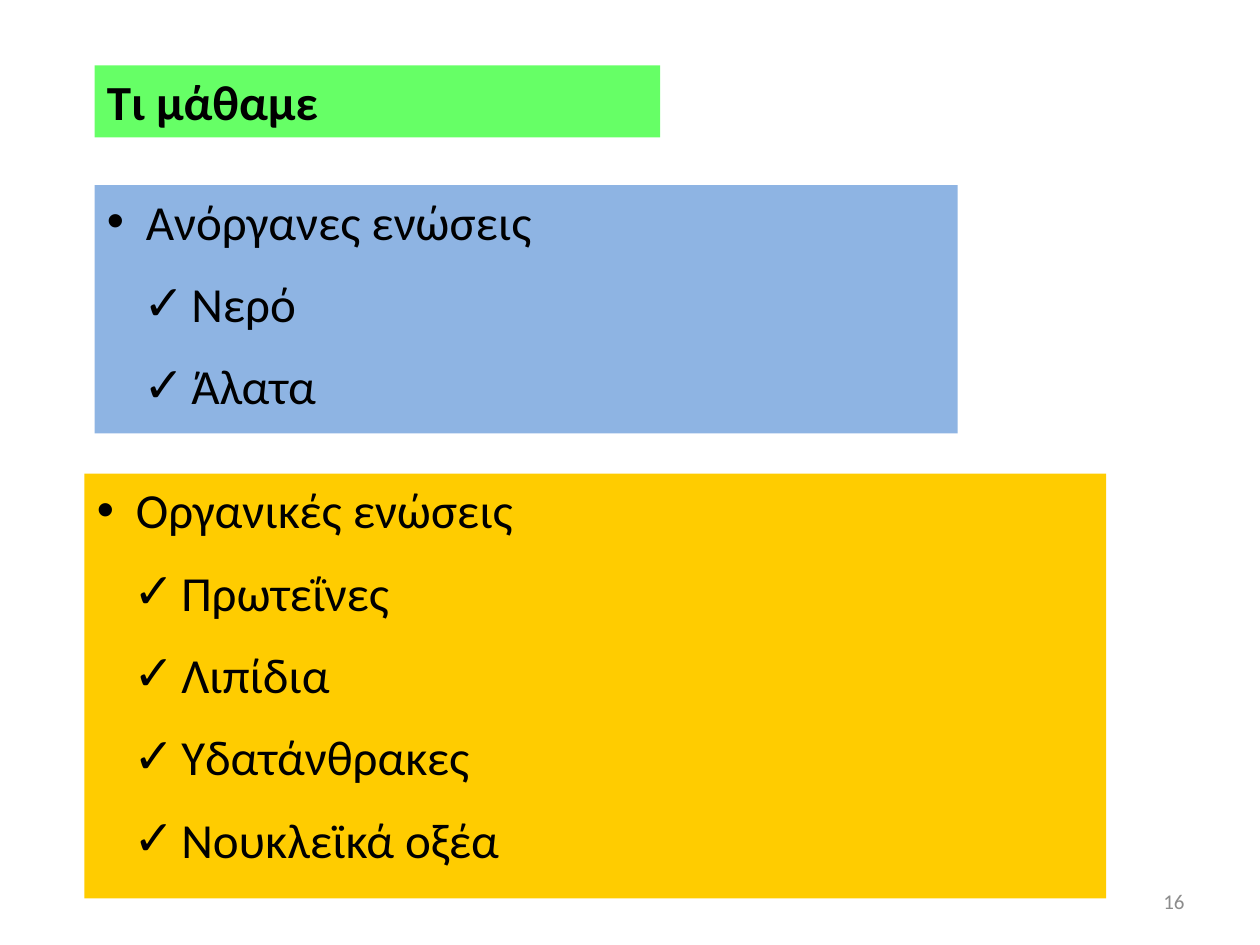
from lxml.etree import SubElement
from pptx import Presentation
from pptx.dml.color import RGBColor
from pptx.enum.shapes import MSO_SHAPE as Shape
from pptx.enum.text import MSO_ANCHOR as Anchor, PP_ALIGN as Align
from pptx.oxml.ns import qn
from pptx.util import Inches, Pt

COLORS = {"title": "66FF66", "inorganic": "8EB4E3", "organic": "FFCC00",
          "text": "000000", "number": "8C8C8C"}


class SlideBuilder:
    """Hold the text style and the current slide, and add its elements."""

    font_name = "Calibri"
    font_size = 28
    space_before = 13.4

    def __init__(self, presentation):
        self.slide = presentation.slides.add_slide(presentation.slide_layouts[6])

    def style(self, paragraph, text, size=font_size, color="text", bold=False):
        paragraph.text = text
        paragraph.font.name = self.font_name
        paragraph.font.size = Pt(size)
        paragraph.font.bold = bold
        paragraph.font.color.rgb = RGBColor.from_string(COLORS[color])

    def bullet(self, paragraph, character, margin, hanging):
        properties = paragraph._p.get_or_add_pPr()
        properties.set("marL", str(Inches(margin)))
        properties.set("indent", str(-Inches(hanging)))
        SubElement(properties, qn("a:buFont"), typeface="Arial")
        SubElement(properties, qn("a:buChar"), char=character)

    def panel(self, left, top, width, height, color):
        shape = self.slide.shapes.add_shape(
            Shape.RECTANGLE, Inches(left), Inches(top), Inches(width), Inches(height))
        shape.shadow.inherit = False
        shape.fill.solid()
        shape.fill.fore_color.rgb = RGBColor.from_string(COLORS[color])
        shape.line.fill.background()
        frame = shape.text_frame
        frame.word_wrap = True
        frame.vertical_anchor = Anchor.TOP
        frame.paragraphs[0].alignment = Align.LEFT
        return frame

    def title(self, text, *box):
        frame = self.panel(*box, "title")
        self.style(frame.paragraphs[0], text, bold=True)

    def topic(self, heading, items, *box, color):
        frame = self.panel(*box, color)
        self.style(frame.paragraphs[0], heading)
        self.bullet(frame.paragraphs[0], "•", 0.31, 0.31)
        for item in items:
            paragraph = frame.add_paragraph()
            self.style(paragraph, item)
            paragraph.alignment = Align.LEFT
            paragraph.level = 1
            paragraph.space_before = Pt(self.space_before)
            self.bullet(paragraph, "✓", 0.67, 0.38)

    def page_number(self, text, left, top, width, height):
        box = self.slide.shapes.add_textbox(
            Inches(left), Inches(top), Inches(width), Inches(height))
        frame = box.text_frame
        frame.word_wrap = True
        frame.vertical_anchor = Anchor.MIDDLE
        self.style(frame.paragraphs[0], text, size=12, color="number")
        frame.paragraphs[0].alignment = Align.RIGHT


def main():
    presentation = Presentation()
    presentation.slide_width = Inches(10)
    presentation.slide_height = Inches(7.5)
    builder = SlideBuilder(presentation)
    builder.title("Τι μάθαμε", 0.75, 0.52, 4.49, 0.57)
    builder.topic("Οργανικές ενώσεις",
                  ["Πρωτεΐνες", "Λιπίδια", "Υδατάνθρακες", "Νουκλεϊκά οξέα"],
                  0.67, 3.76, 8.11, 3.37, color="organic")
    builder.topic("Ανόργανες ενώσεις", ["Νερό", "Άλατα"],
                  0.75, 1.47, 6.85, 1.97, color="inorganic")
    builder.page_number("16", 7.17, 6.95, 2.33, 0.4)
    presentation.save("out.pptx")


if __name__ == "__main__":
    main()
